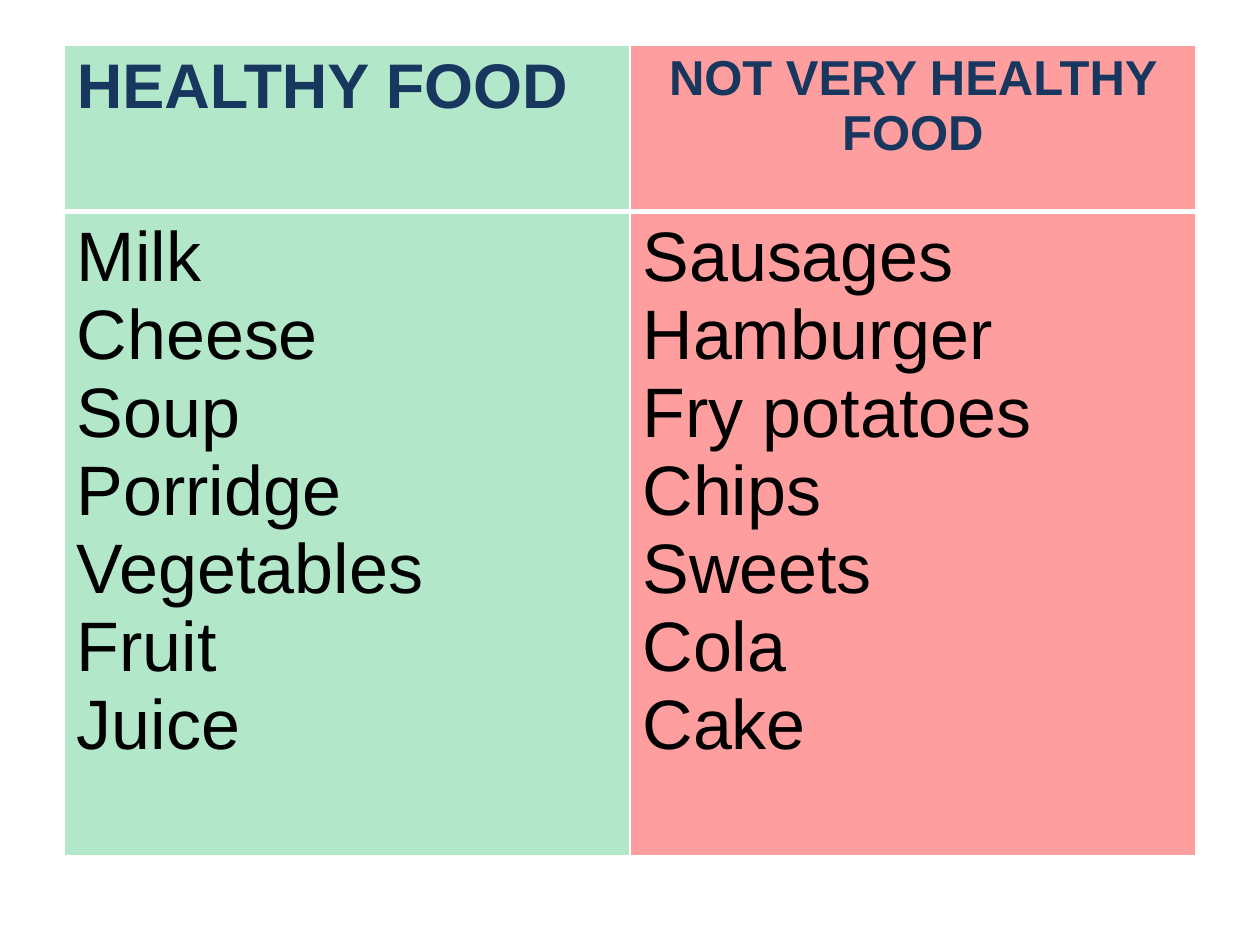
import pptx
import pptx.dml.color
import pptx.enum.text
import pptx.oxml
import pptx.oxml.ns
import pptx.util
from lxml import etree

Inches = pptx.util.Inches
Pt = pptx.util.Pt
RGB = pptx.dml.color.RGBColor.from_string
ALIGN = pptx.enum.text.PP_ALIGN
qn = pptx.oxml.ns.qn

HEX = {"good": "00B050", "bad": "FF0000", "head": "17375E",
       "text": "000000", "line": "FFFFFF"}

# fill, opacity in percent, heading, heading size, alignment, foods
FOODS = [
    ("good", 30, "HEALTHY FOOD", 36, ALIGN.LEFT,
     ["Milk", "Cheese", "Soup", "Porridge", "Vegetables", "Fruit", "Juice"]),
    ("bad", 38, "NOT VERY HEALTHY FOOD", 28, ALIGN.CENTER,
     ["Sausages", "Hamburger", "Fry potatoes", "Chips", "Sweets", "Cola",
      "Cake"]),
]


def edge(cell, widths):
    """Draw the left, right, top and bottom borders, widths in points."""
    props = cell._tc.get_or_add_tcPr()
    for side, width in zip("LRTB", widths):
        line = etree.SubElement(props, qn(f"a:ln{side}"), w=str(Pt(width)))
        fill = etree.SubElement(line, qn("a:solidFill"))
        etree.SubElement(fill, qn("a:srgbClr"), val=HEX["line"])


def tint(cell, color, alpha):
    """Fill a cell with a partly transparent colour."""
    cell.fill.solid()
    cell.fill.fore_color.rgb = RGB(HEX[color])
    node = cell._tc.tcPr.find(f"{qn('a:solidFill')}/{qn('a:srgbClr')}")
    etree.SubElement(node, qn("a:alpha"), val=str(alpha * 1000))


def write(cell, lines, size, color, bold, align=ALIGN.LEFT):
    frame = cell.text_frame
    for i, line in enumerate(lines):
        para = frame.add_paragraph() if i else frame.paragraphs[0]
        para.alignment = align
        run = para.add_run()
        run.text = line
        font = run.font
        font.name, font.size, font.bold = "Arial", Pt(size), bold
        font.color.rgb = RGB(HEX[color])


def add_foods(slide, left, top, width, rows):
    grid = slide.shapes.add_table(
        2, len(FOODS), left, top, width, sum(rows)).table
    for row, height in zip(grid.rows, rows):
        row.height = height
    for col, (color, alpha, title, size, align, foods) in enumerate(FOODS):
        grid.columns[col].width = width // len(FOODS)
        head, body = grid.cell(0, col), grid.cell(1, col)
        edge(head, (1, 1, 1, 3))
        edge(body, (1, 1, 3, 1))
        for cell in (head, body):
            tint(cell, color, alpha)
        write(head, [title], size, "head", True, align)
        write(body, foods, 40, "text", False)


def main():
    deck = pptx.Presentation()
    deck.slide_width, deck.slide_height = Inches(10), Inches(7.5)
    slide = deck.slides.add_slide(deck.slide_layouts[6])
    add_foods(slide, Inches(0.51), Inches(0.36), Inches(8.98),
              (Inches(1.32), Inches(5.11)))
    deck.save("out.pptx")


if __name__ == "__main__":
    main()
